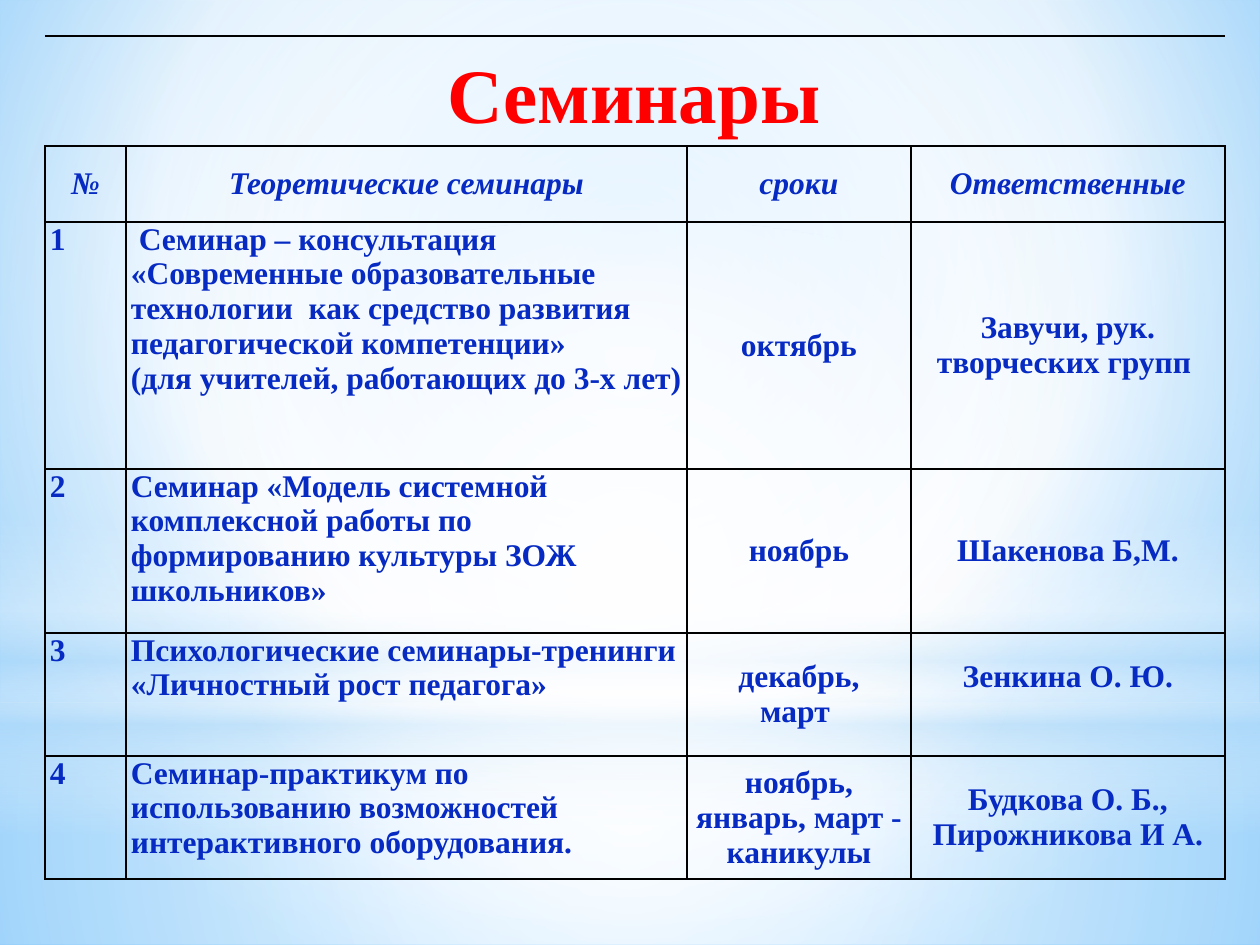
import pptx
import pptx.util
import pptx.dml.color
import pptx.enum.shapes
import pptx.enum.text
import pptx.oxml
import pptx.oxml.ns
from lxml import etree

RGBColor = pptx.dml.color.RGBColor
WHITE = RGBColor(0xFF, 0xFF, 0xFF)
BLACK = RGBColor(0x00, 0x00, 0x00)
RED = RGBColor(0xFF, 0x00, 0x00)
TEXT_BLUE = RGBColor(0x06, 0x2A, 0xC2)
SKY = RGBColor(0x9E, 0xD5, 0xFF)
DEEP_SKY = RGBColor(0x5B, 0xB9, 0xFF)
HAZE = RGBColor(0xB4, 0xDC, 0xFA)
FONT = "Times New Roman"
PX_PER_INCH = 126
CENTER = (50, 50, 50, 50)
SIDES = ("L", "R", "T", "B")
RECTANGLE = pptx.enum.shapes.MSO_SHAPE.RECTANGLE
OVAL = pptx.enum.shapes.MSO_SHAPE.OVAL
MIDDLE = pptx.enum.text.MSO_ANCHOR.MIDDLE
TOP = pptx.enum.text.MSO_ANCHOR.TOP
ALIGN = pptx.enum.text.PP_ALIGN

HEADINGS = ("№", "Теоретические семинары", "сроки", "Ответственные")
SEMINARS = (
    ("1", " Семинар – консультация «Современные образовательные технологии  как средство "
     "развития педагогической компетенции»\v(для учителей, работающих до 3-х лет)",
     "октябрь", "Завучи, рук. творческих групп "),
    ("2", "Семинар «Модель системной комплексной работы по формированию культуры ЗОЖ школьников»",
     "ноябрь", "Шакенова Б,М."),
    ("3", "Психологические семинары-тренинги «Личностный рост педагога»",
     "декабрь,\nмарт ", "Зенкина О. Ю."),
    ("4", "Семинар-практикум по использованию возможностей  интерактивного оборудования.",
     "ноябрь, январь, март - каникулы", "Будкова О. Б.,\nПирожникова И А."),
)
COLUMN_WIDTHS = (81, 561, 224, 314)
ROW_HEIGHTS = (110, 76, 247, 164, 123, 123)


def px(length):
    return pptx.util.Emu(round(length * 914400 / PX_PER_INCH))


def set_gradient(properties, stops, focus=None):
    solid = properties.find(pptx.oxml.ns.qn("a:solidFill"))
    stop_xml = "".join(
        f'<a:gs pos="{position * 1000}"><a:srgbClr val="{color}">'
        f'<a:alpha val="{opacity * 1000}"/></a:srgbClr></a:gs>'
        for position, color, opacity in stops)
    if focus:
        left, top, right, bottom = (edge * 1000 for edge in focus)
        direction = (f'<a:path path="circle"><a:fillToRect l="{left}" t="{top}" '
                     f'r="{right}" b="{bottom}"/></a:path>')
    else:
        direction = '<a:lin ang="5400000" scaled="0"/>'
    gradient = pptx.oxml.parse_xml(
        f'<a:gradFill {pptx.oxml.ns.nsdecls("a")} rotWithShape="1">'
        f'<a:gsLst>{stop_xml}</a:gsLst>{direction}</a:gradFill>')
    properties.replace(solid, gradient)


def add_glow(slide, preset, top, height, stops, focus=None):
    glow = slide.shapes.add_shape(preset, 0, px(top), px(1260), px(height))
    glow.shadow.inherit = False
    glow.line.fill.background()
    glow.fill.solid()
    set_gradient(glow.element.spPr, stops, focus)


def paint_backdrop(slide):
    slide.background.fill.solid()
    set_gradient(slide.element.find(".//" + pptx.oxml.ns.qn("p:bgPr")),
                 ((0, SKY, 100), (60, WHITE, 100), (100, DEEP_SKY, 100)), (20, 10, 20, 60))
    add_glow(slide, RECTANGLE, 703, 242,
             ((0, WHITE, 91), (37, WHITE, 76), (100, HAZE, 79)), CENTER)
    add_glow(slide, RECTANGLE, 0, 703,
             ((0, WHITE, 89), (48, WHITE, 62), (100, HAZE, 79)), CENTER)
    add_glow(slide, RECTANGLE, 519, 315,
             ((0, WHITE, 0), (29, WHITE, 30), (45, HAZE, 40),
              (55, WHITE, 26), (65, HAZE, 60), (100, WHITE, 0)))
    add_glow(slide, OVAL, 220, 703, ((0, WHITE, 100), (56, WHITE, 0)), CENTER)


def set_borders(cell, visible=SIDES):
    properties = cell._tc.get_or_add_tcPr()
    for index, side in enumerate(SIDES):
        border = etree.Element(pptx.oxml.ns.qn(f"a:ln{side}"), w="12700")
        if side in visible:
            fill = etree.SubElement(border, pptx.oxml.ns.qn("a:solidFill"))
            etree.SubElement(fill, pptx.oxml.ns.qn("a:srgbClr"), val=str(BLACK))
        else:
            etree.SubElement(border, pptx.oxml.ns.qn("a:noFill"))
        properties.insert(index, border)


def format_paragraph(paragraph, size, color, alignment, italic=False):
    paragraph.alignment = alignment
    font = paragraph.font
    font.name, font.size = FONT, pptx.util.Pt(size)
    font.bold, font.italic = True, italic
    font.color.rgb = color


def fill_cell(cell, text, centered, italic):
    cell.text = text
    cell.vertical_anchor = MIDDLE if centered else TOP
    cell.margin_left = cell.margin_right = px(5)
    cell.margin_top = cell.margin_bottom = 0
    for paragraph in cell.text_frame.paragraphs:
        format_paragraph(paragraph, 18, TEXT_BLUE,
                         ALIGN.CENTER if centered else ALIGN.LEFT, italic)


def add_seminar_table(slide):
    table = slide.shapes.add_table(
        len(ROW_HEIGHTS), len(COLUMN_WIDTHS), px(45), px(36),
        px(sum(COLUMN_WIDTHS)), px(sum(ROW_HEIGHTS))).table
    table.first_row = table.horz_banding = False
    for column, width in zip(table.columns, COLUMN_WIDTHS):
        column.width = px(width)
    for row, height in zip(table.rows, ROW_HEIGHTS):
        row.height = px(height)
    for cell in table.iter_cells():
        cell.fill.background()
    for cell in table.rows[0].cells:
        set_borders(cell, ("T", "B"))
    table.cell(0, 0).merge(table.cell(0, len(COLUMN_WIDTHS) - 1))
    for row_number, texts in enumerate((HEADINGS, *SEMINARS), start=1):
        heading = row_number == 1
        for column_number, text in enumerate(texts):
            cell = table.cell(row_number, column_number)
            fill_cell(cell, text, heading or column_number > 1, heading)
            set_borders(cell)
    table.cell(4, 3).margin_bottom = px(35)


def place_title(slide):
    title = slide.shapes.title
    title.left, title.top, title.width, title.height = px(297), px(40), px(674), px(106)
    title.text = "Семинары"
    title.text_frame.vertical_anchor = TOP
    format_paragraph(title.text_frame.paragraphs[0], 44, RED, ALIGN.CENTER)
    slide.shapes.element.append(title.element)


def main():
    presentation = pptx.Presentation()
    presentation.slide_width, presentation.slide_height = px(1260), px(945)
    slide = presentation.slides.add_slide(presentation.slide_layouts[5])
    paint_backdrop(slide)
    add_seminar_table(slide)
    place_title(slide)
    presentation.save("out.pptx")


if __name__ == "__main__":
    main()
